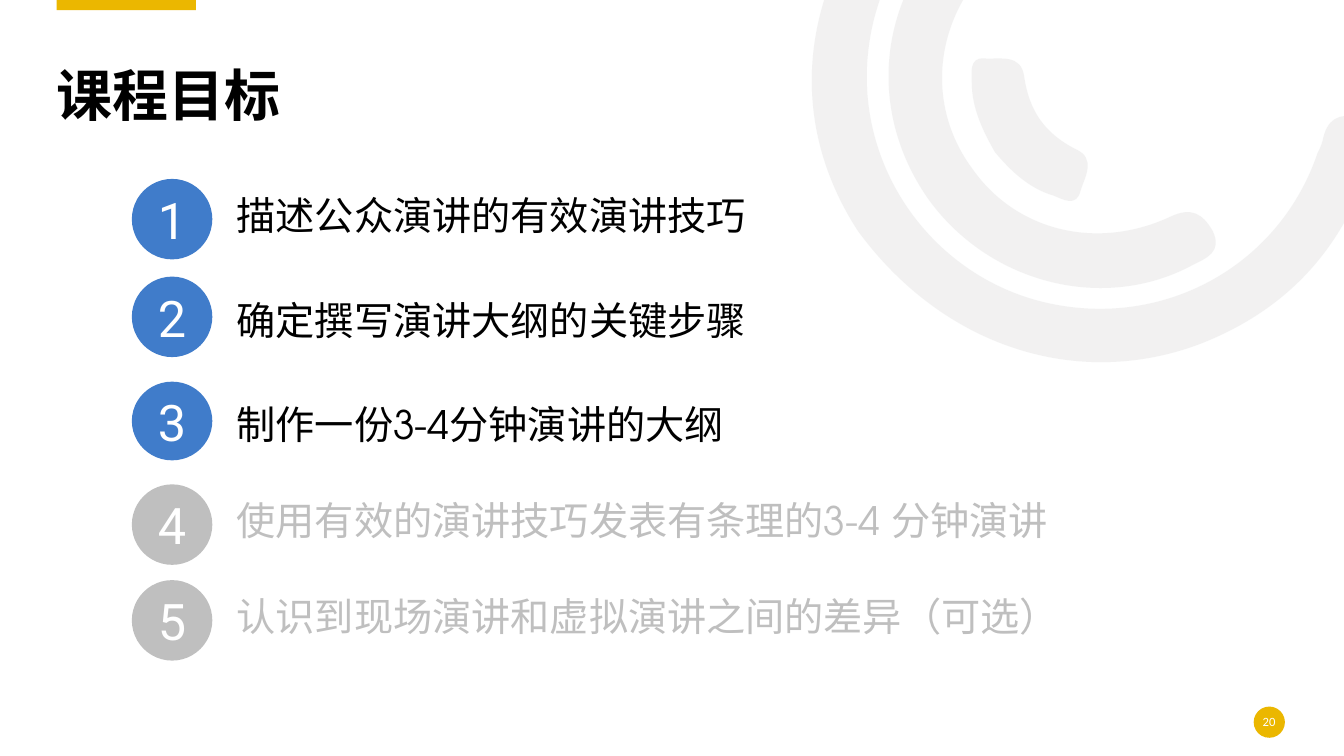
import math
from lxml import etree
from pptx import Presentation
from pptx import util as u
from pptx.dml.color import RGBColor
from pptx.enum import lang, shapes, text
from pptx.oxml import ns

Pt = u.Pt
COLORS = {"gold": "EBB700", "blue": "407CCA", "muted": "BFBFBF",
          "ring": "E7E6E6", "black": "000000", "white": "FFFFFF"}
RING_TURN = 144.2

RINGS = [
    ((8.13, -2.02, 4.85, 6), (8.51, 2.29), [
        (7.99, 1.49, 7.87, 0.5, 8.38, -0.5), (8.9, -1.52, 9.76, -2.03, 10.9, -2.07),
        (11.05, -2.07, 11.21, -2.1, 11.31, -1.95), (11.44, -1.75, 11.27, -1.54, 10.98, -1.54),
        (9.67, -1.54, 8.65, -0.59, 8.6, 0.68), (8.56, 1.81, 9.36, 2.81, 10.46, 3.02),
        (11.6, 3.24, 12.7, 2.61, 13.07, 1.52), (13.09, 1.48, 13.11, 1.44, 13.12, 1.4),
        (13.16, 1.19, 13.27, 1.11, 13.49, 1.17), (13.73, 1.24, 13.67, 1.41, 13.61, 1.56),
        (13.34, 2.45, 12.78, 3.07, 11.91, 3.41), (10.7, 3.87, 9.36, 3.45, 8.51, 2.29)]),
    ((9.01, -0.78, 2.13, 4.26), (9.22, 1.99), [
        (8.62, 1.15, 8.69, 0.07, 9.4, -0.68), (9.51, -0.79, 9.62, -0.95, 9.8, -0.78),
        (9.95, -0.64, 9.97, -0.5, 9.79, -0.32), (9.25, 0.26, 9.2, 1.08, 9.65, 1.68),
        (10.08, 2.29, 10.88, 2.49, 11.61, 2.15), (11.82, 2.05, 11.93, 2.12, 12.03, 2.29),
        (12.13, 2.5, 11.97, 2.56, 11.83, 2.63), (10.96, 3.1, 9.83, 2.82, 9.22, 1.99)]),
    ((9.8, 0.37, 0.78, 1.83), (9.87, 1.51), [
        (9.75, 1.3, 9.64, 1.07, 9.64, 0.82), (9.64, 0.73, 9.61, 0.57, 9.76, 0.58),
        (9.92, 0.59, 10.13, 0.53, 10.16, 0.76), (10.21, 1.1, 10.36, 1.32, 10.67, 1.48),
        (10.88, 1.57, 10.76, 1.76, 10.72, 1.89), (10.68, 2.06, 10.55, 1.98, 10.45, 1.94),
        (10.21, 1.87, 10.03, 1.7, 9.87, 1.51)]),
]

GOALS = [
    ("描述公众演讲的有效演讲技巧", 127.8, 57.5, "blue", "black", 18),
    ("确定撰写演讲大纲的关键步骤", 197.6, 57.5, "blue", "black", 18),
    ("制作一份3-4分钟演讲的大纲", 272.6, 56.2, "blue", "black", 12),
    ("使用有效的演讲技巧发表有条理的3-4 分钟演讲", 346, 57.5, "muted", "muted", 12),
    ("认识到现场演讲和虚拟演讲之间的差异（可选）", 414.4, 57.5, "muted", "muted", 12),
]


def paint(sp, color):
    sp.shadow.inherit = False
    sp.fill.solid()
    sp.fill.fore_color.rgb = RGBColor.from_string(COLORS[color])
    sp.line.fill.background()


def style(p, name, size, color):
    p.font.name = name
    p.font.size = Pt(size)
    p.font.color.rgb = RGBColor.from_string(COLORS[color])
    p.font.language_id = lang.MSO_LANGUAGE_ID.SIMPLIFIED_CHINESE


prs = Presentation()
prs.slide_width, prs.slide_height = Pt(960), Pt(540)
s = prs.slides.add_slide(prs.slide_layouts[5])

cos, sin = math.cos(math.radians(RING_TURN)), math.sin(math.radians(RING_TURN))
for frame, start, curves in RINGS:
    left, top, width, height = [Pt(72 * v) for v in frame]
    local = []
    for x, y in [start] + [c[i:i + 2] for c in curves for i in (0, 2, 4)]:
        dx, dy = Pt(72 * x) - left - width / 2, Pt(72 * y) - top - height / 2
        local.append((round(width / 2 + dx * cos + dy * sin),
                      round(height / 2 - dx * sin + dy * cos)))
    builder = s.shapes.build_freeform(*local[0])
    builder.add_line_segments(local[3::3], close=True)
    sp = builder.convert_to_shape()
    sp.left, sp.top, sp.width, sp.height = left, top, width, height
    sp.rotation = RING_TURN
    paint(sp, "ring")
    srgb = sp.fill._xPr.find(".//" + ns.qn("a:srgbClr"))
    etree.SubElement(srgb, ns.qn("a:alpha")).set("val", "53000")
    outline = sp._element.find(".//" + ns.qn("a:pathLst"))[0]
    outline.set("w", str(width))
    outline.set("h", str(height))
    for part in list(outline):
        outline.remove(part)
    commands = [("a:moveTo", local[:1])]
    commands += [("a:cubicBezTo", local[i:i + 3]) for i in range(1, len(local), 3)]
    for tag, points in commands + [("a:close", [])]:
        command = etree.SubElement(outline, ns.qn(tag))
        for x, y in points:
            etree.SubElement(command, ns.qn("a:pt"), x=str(x), y=str(y))

bar = s.shapes.add_shape(shapes.MSO_SHAPE.RECTANGLE, Pt(40.5), Pt(-1.4), Pt(99.4), Pt(8.6))
bar.rotation = 180
paint(bar, "gold")

badge = s.shapes.add_shape(shapes.MSO_SHAPE.OVAL, Pt(895.5), Pt(504.7), Pt(22.3), Pt(22.3))
paint(badge, "gold")
number = s.shapes.add_textbox(Pt(895), Pt(508.3), Pt(23), Pt(14.4))
tf = number.text_frame
tf.word_wrap = True
tf.margin_left = tf.margin_right = tf.margin_top = tf.margin_bottom = 0
tf.vertical_anchor = text.MSO_ANCHOR.MIDDLE
p = tf.paragraphs[0]
p.text = "20"
p.alignment = text.PP_ALIGN.CENTER
style(p, "Calibri", 9, "white")

title = s.shapes.title
title.left, title.top, title.width, title.height = Pt(40.5), Pt(19.4), Pt(877.7), Pt(72.7)
tf = title.text_frame
tf.margin_left = tf.margin_right = tf.margin_top = tf.margin_bottom = 0
tf.vertical_anchor = text.MSO_ANCHOR.BOTTOM
p = tf.paragraphs[0]
p.text = "课程目标"
p.alignment = text.PP_ALIGN.LEFT
p.line_spacing = 0.9
style(p, "TeX Gyre Adventor", 40, "black")
p.font.bold = True

goals = s.shapes.add_textbox(Pt(162), Pt(128.2), Pt(779), Pt(365))
tf = goals.text_frame
tf.word_wrap = True
for n, (goal, top, height, disc_color, text_color, after) in enumerate(GOALS, 1):
    p = tf.paragraphs[0] if n == 1 else tf.add_paragraph()
    p.text = goal
    p.line_spacing = 1.15
    p.space_before = Pt(0 if n == 1 else 18)
    p.space_after = Pt(after)
    style(p, "TeX Gyre Adventor", 28, text_color)

    disc = s.shapes.add_shape(shapes.MSO_SHAPE.OVAL, Pt(94.2), Pt(top), Pt(57.5), Pt(height))
    paint(disc, disc_color)
    disc.text_frame.vertical_anchor = text.MSO_ANCHOR.MIDDLE
    p = disc.text_frame.paragraphs[0]
    p.text = str(n)
    p.alignment = text.PP_ALIGN.CENTER
    style(p, "Roboto", 36, "white")

prs.save("out.pptx")
